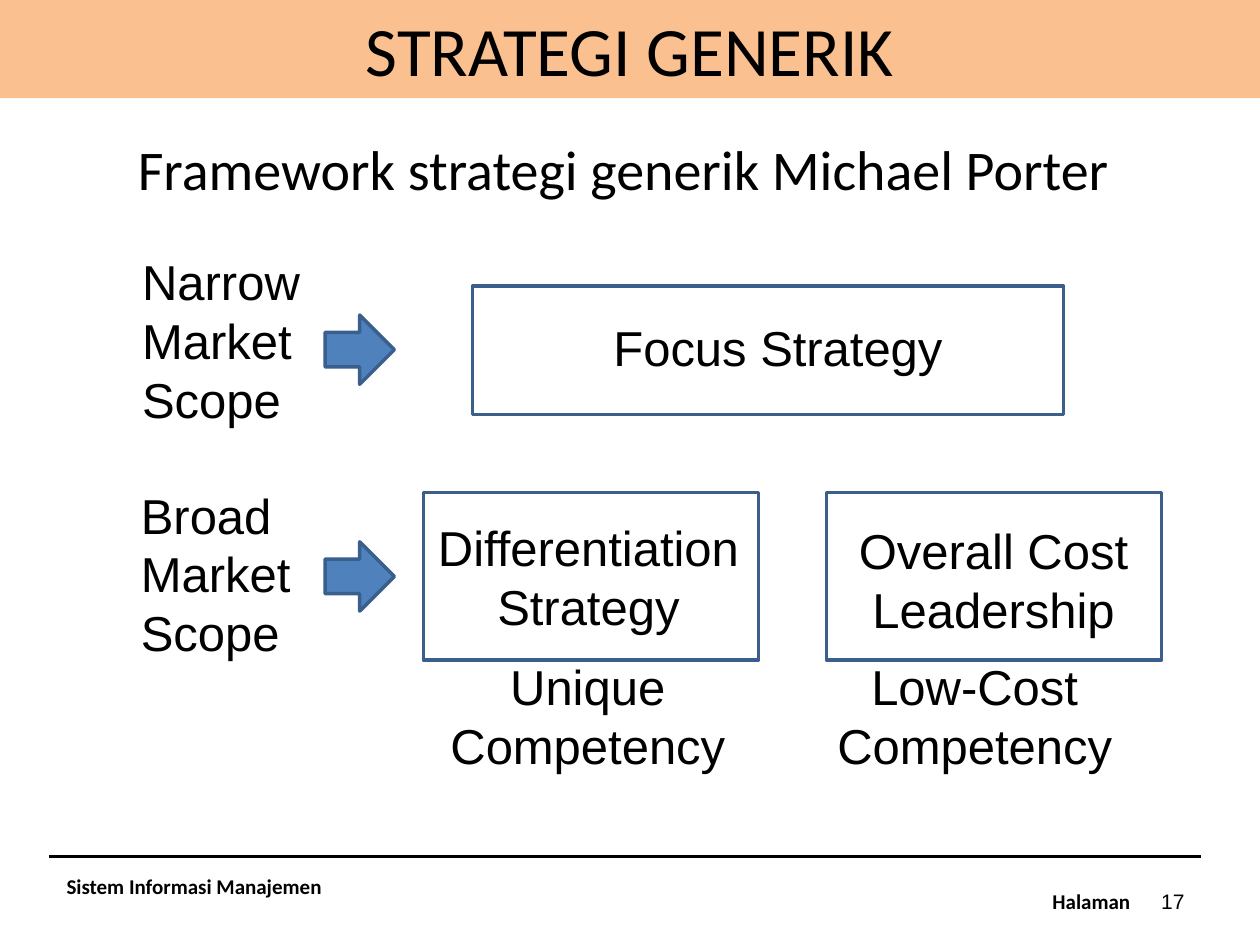
from pptx import Presentation, util as u
from pptx.dml import color
from pptx.enum import shapes, text
from pptx.oxml import ns
from lxml import etree

I = u.Inches
A = text.PP_ALIGN
V = text.MSO_ANCHOR
S = shapes.MSO_SHAPE
theme = {
    "ink": color.RGBColor.from_string("000000"),
    "band": color.RGBColor.from_string("FAC090"),
    "edge": color.RGBColor.from_string("3A5F8C"),
    "arrow": color.RGBColor.from_string("4F81BD"),
    "head": "Calibri",
    "body": "Arial",
    "title": u.Pt(39.6),
    "lead": u.Pt(32),
    "label": u.Pt(28),
    "foot": u.Pt(12),
}


def write(box, lines, size, face, align=A.LEFT, anchor=V.TOP, wrap=True, bold=False):
    frame = box.text_frame
    frame.text = "\n".join(lines)
    form = {"word_wrap": wrap, "vertical_anchor": anchor, "auto_size": text.MSO_AUTO_SIZE.NONE}
    for key, val in form.items():
        setattr(frame, key, val)
    for para in frame.paragraphs:
        para.alignment = align
        font = para.runs[0].font
        for key, val in {"size": theme[size], "name": theme[face], "bold": bold}.items():
            setattr(font, key, val)
        font.color.rgb = theme["ink"]


def draw(kind, spot, fill=None):
    item = slide.shapes.add_shape(kind, *map(I, spot))
    item.shadow.inherit = False
    if fill:
        item.fill.solid()
        item.fill.fore_color.rgb = theme[fill]
    else:
        item.fill.background()
    item.line.color.rgb = theme["edge"]
    item.line.width = u.Pt(2)


deck = Presentation()
deck.slide_width, deck.slide_height = I(10), I(7.5)
slide = deck.slides.add_slide(deck.slide_layouts[5])

title = slide.shapes.title
for key, val in {"left": 0, "top": 0, "width": 10, "height": 0.78}.items():
    setattr(title, key, I(val))
title.fill.solid()
title.fill.fore_color.rgb = theme["band"]
write(title, ["STRATEGI GENERIK"], "title", "head", A.CENTER, V.MIDDLE)

rule = slide.shapes.add_connector(shapes.MSO_CONNECTOR.STRAIGHT, I(0.39), I(6.8), I(9.53), I(6.8))
rule.line.color.rgb = theme["ink"]
rule.line.width = u.Pt(1.5)
etree.SubElement(rule.element.spPr, ns.qn("a:effectLst"))

lead = slide.shapes.add_textbox(I(0.5), I(1.02), I(9), I(0.63))
write(lead, ["Framework strategi generik Michael Porter "], "lead", "head", A.CENTER)
lead.text_frame.paragraphs[0].space_before = u.Pt(6.4)

for spot in [(3.75, 2.27, 4.69, 1.02), (3.36, 3.91, 2.66, 1.33), (6.56, 3.91, 2.66, 1.33)]:
    draw(S.RECTANGLE, spot)
for top in (2.5, 4.3):
    draw(S.RIGHT_ARROW, (2.58, top, 0.55, 0.55), "arrow")

labels = [
    (["Focus Strategy"], (4.77, 2.47, 2.85, 0.57), A.LEFT, False),
    (["Differentiation", "Strategy"], (3.36, 4.06, 2.62, 1.04), A.CENTER, False),
    (["Overall Cost", "Leadership"], (6.7, 4.08, 2.37, 1.04), A.CENTER, False),
    (["Narrow", "Market", "Scope"], (1.03, 1.95, 1.47, 1.51), A.LEFT, False),
    (["Broad", "Market", "Scope"], (1.02, 3.8, 1.4, 1.51), A.LEFT, False),
    (["Unique", "Competency"], (3.3, 5.16, 2.73, 1.04), A.CENTER, True),
    (["Low-Cost", "Competency"], (6.33, 5.16, 2.81, 1.04), A.CENTER, True),
]
for lines, spot, align, wrap in labels:
    box = slide.shapes.add_textbox(*map(I, spot))
    write(box, lines, "label", "body", align, wrap=wrap)

feet = [
    ("Sistem Informasi Manajemen", (0.43, 6.88, 2.54, 0.4), "head", A.LEFT, V.TOP, True),
    ("Halaman", (8.13, 6.95, 0.94, 0.4), "head", A.RIGHT, V.MIDDLE, True),
    ("17", (9.06, 6.95, 0.44, 0.4), "body", A.RIGHT, V.MIDDLE, False),
]
for line, spot, face, align, anchor, bold in feet:
    box = slide.shapes.add_textbox(*map(I, spot))
    write(box, [line], "foot", face, align, anchor, bold=bold)

deck.save("out.pptx")
